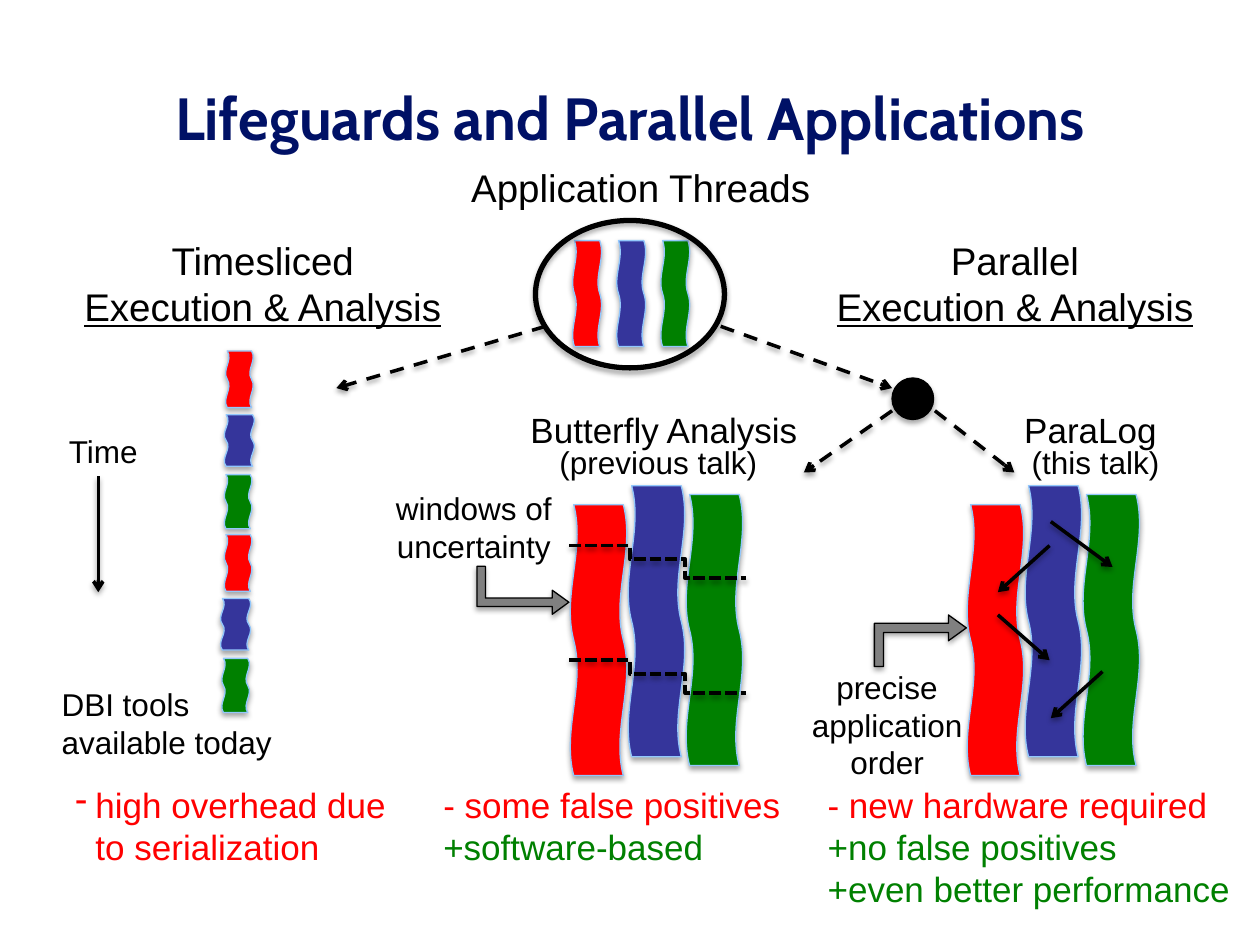
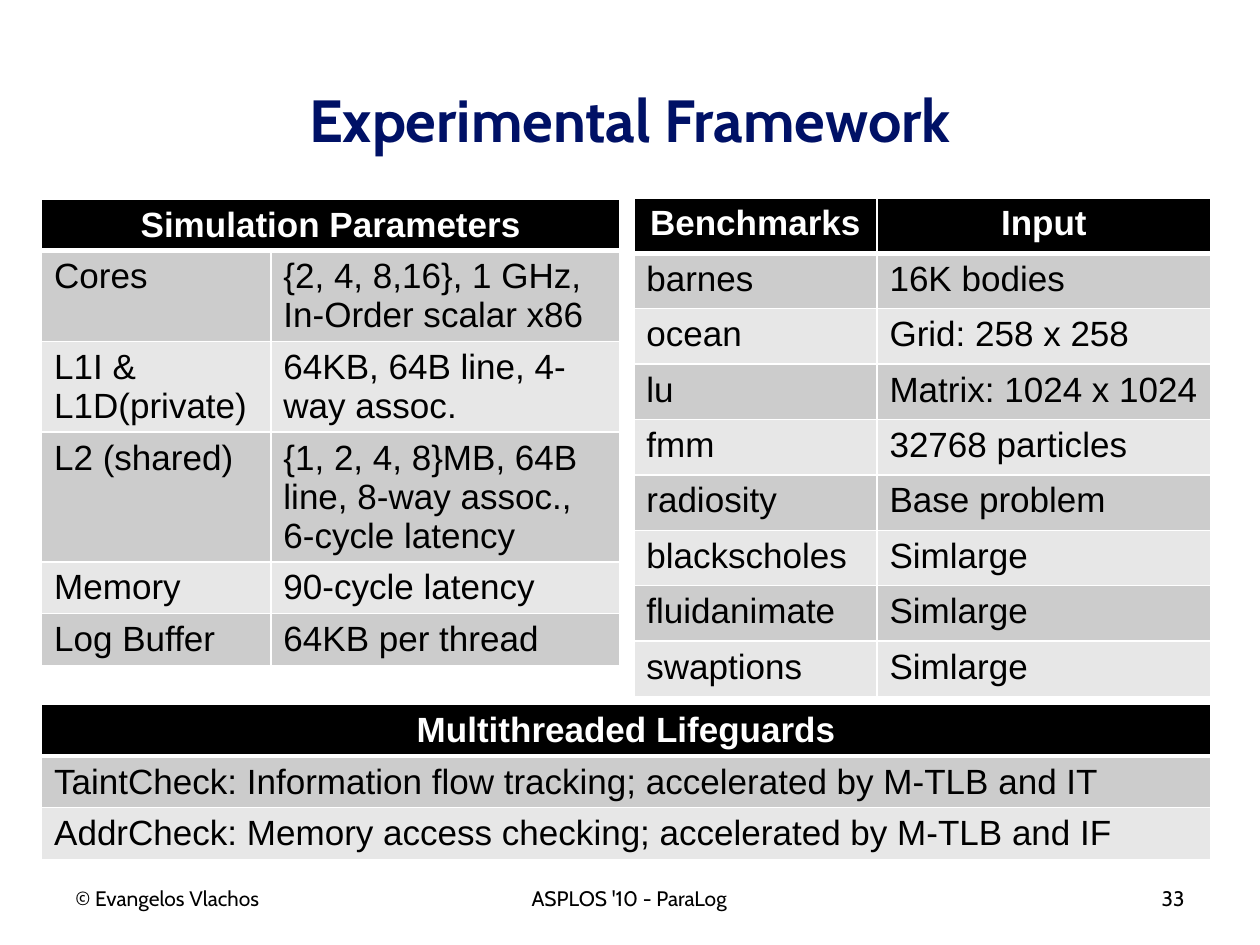
from itertools import cycle

from lxml.etree import SubElement
from pptx import Presentation
from pptx.dml.color import RGBColor
from pptx.enum.dml import MSO_LINE
from pptx.enum.shapes import MSO_CONNECTOR, MSO_SHAPE as SHAPE
from pptx.enum.text import MSO_ANCHOR, PP_ALIGN as ALIGN
from pptx.oxml.ns import qn
from pptx.util import Inches, Pt

BLACK, WHITE, NAVY, GRAY = "000000", "FFFFFF", "001166", "808080"
RED, BLUE, GREEN, WAVE_EDGE = "FF0000", "35359B", "008000", "93C8FC"
THREAD_COLORS = [RED, BLUE, GREEN]
BANDS = ["CCCCCC", "E7E7E7"]


def write(paragraph, text, size, color=BLACK, align=ALIGN.LEFT, **font_values):
    """Fill one paragraph with a single formatted run."""
    paragraph.alignment = align
    run = paragraph.add_run()
    run.text = text
    for name, value in {"name": "Arial", "size": Pt(size), **font_values}.items():
        setattr(run.font, name, value)
    run.font.color.rgb = RGBColor.from_string(color)


def draw(shape, fill=None, line=BLACK, width=0.75, dash=None, arrow=False):
    """Set fill, outline, arrowhead and the soft shadow under a shape."""
    if fill:
        shape.fill.solid()
        shape.fill.fore_color.rgb = RGBColor.from_string(fill)
    elif hasattr(shape, "fill"):
        shape.fill.background()
    shape.line.color.rgb = RGBColor.from_string(line)
    shape.line.width = Pt(width)
    if dash:
        shape.line.dash_style = dash
    properties = shape.element.spPr
    if arrow:
        SubElement(properties.find(qn("a:ln")), qn("a:tailEnd"), type="arrow")
    effects = SubElement(properties, qn("a:effectLst"))
    shadow = SubElement(effects, qn("a:outerShdw"), blurRad=str(Pt(3.1)),
                        dist=str(Pt(1.8)), dir="5400000", rotWithShape="0")
    shadow_color = SubElement(shadow, qn("a:srgbClr"), val=BLACK)
    SubElement(shadow_color, qn("a:alpha"), val="35000")


presentation = Presentation()
presentation.slide_width, presentation.slide_height = Inches(10), Inches(7.5)

slides = []
for title_text, top in [("Lifeguards and Parallel Applications", 0.3),
                        ("Experimental Framework", 0.32)]:
    slide = presentation.slides.add_slide(presentation.slide_layouts[5])
    title = slide.shapes.title
    title.left, title.top = Inches(0.5), Inches(top)
    title.width, title.height = Inches(9), Inches(1.25)
    title.text_frame.vertical_anchor = MSO_ANCHOR.MIDDLE
    write(title.text_frame.paragraphs[0], title_text, 34, NAVY, ALIGN.CENTER,
          name="Cabin", bold=True)
    slides.append(slide)
threads_slide, framework_slide = slides

# Slide 1: wavy threads, as centre x, centre y, length, thickness
shapes = threads_slide.shapes
waves = [(4.66 + 0.35 * i, 2.33, 0.84, 0.23) for i in range(3)]
for group_left in (4.75, 7.9):
    waves += [(group_left + 0.46 * i, y, 2.15, 0.45)
              for i, y in enumerate((5.08, 4.93, 5.0))]
slice_sizes = [(0.45, 0.22), (0.41, 0.24), (0.43, 0.22)] * 2
waves += [(1.9 - 0.01 * (i // 2 + i // 4), 3.01 + 0.486 * i, length, thickness)
          for i, (length, thickness) in enumerate(slice_sizes)]
for (x, y, length, thickness), color in zip(waves, cycle(THREAD_COLORS)):
    wave = shapes.add_shape(SHAPE.DOUBLE_WAVE, Inches(x - length / 2),
                            Inches(y - thickness / 2), Inches(length), Inches(thickness))
    wave.rotation = 270
    draw(wave, color, WAVE_EDGE)

thread_ring = shapes.add_shape(SHAPE.OVAL, Inches(4.25), Inches(1.75), Inches(1.5), Inches(1.17))
draw(thread_ring, width=3)

# Arrows: branches are dashed, time and ordering arrows are solid
branches = [(4.33, 2.59, 2.67, 3.08), (5.72, 2.59, 7.08, 3.08),
            (7.08, 3.26, 6.38, 3.75), (7.42, 3.26, 8.05, 3.75)]
time_and_order = [(0.78, 3.78, 0.78, 4.7),
                  (8.33, 4.33, 7.92, 4.7), (7.92, 4.88, 8.33, 5.24),
                  (8.34, 4.14, 8.83, 4.5), (8.75, 5.33, 8.34, 5.7)]
for arrows, dash in [(branches, MSO_LINE.DASH), (time_and_order, None)]:
    for ends in arrows:
        arrow = shapes.add_connector(MSO_CONNECTOR.STRAIGHT, *map(Inches, ends))
        draw(arrow, width=2, dash=dash, arrow=True)

branch_dot = shapes.add_shape(SHAPE.OVAL, Inches(7.08), Inches(3), Inches(0.33), Inches(0.33))
draw(branch_dot, BLACK)

# Window borders step down across the three butterfly threads
for top in (4.33, 5.24):
    steps = [(5, 0), (5, 0.11), (5.44, 0.11), (5.44, 0.26), (5.92, 0.26)]
    builder = shapes.build_freeform(Inches(4.52), Inches(top))
    builder.add_line_segments([(Inches(x), Inches(top + drop)) for x, drop in steps],
                              close=False)
    draw(builder.convert_to_shape(), width=2.25, dash=MSO_LINE.SQUARE_DOT)

for left, top, width, flipped in [(3.96, 4.32, 0.38, False), (7.1, 4.72, 0.41, True)]:
    pointer = shapes.add_shape(SHAPE.BENT_UP_ARROW, Inches(left), Inches(top),
                               Inches(width), Inches(0.73))
    for i, value in enumerate((0.177, 0.25, 0.347)):
        pointer.adjustments[i] = value
    pointer.rotation = 90
    if flipped:
        pointer.element.spPr.xfrm.set("flipH", "1")
    draw(pointer, GRAY)

# Text: left, top, width, height, size, alignment, lines as (text, colour, underline)
center, left_side = ALIGN.CENTER, ALIGN.LEFT
analysis = ("Execution & Analysis", BLACK, True)
labels = [
    (3.5, 1.25, 3.17, 0.47, 22, center, [("Application Threads",)]),
    (0.5, 1.83, 3.17, 0.84, 22, center, [("Timesliced",), analysis]),
    (6.47, 1.83, 3.17, 0.84, 22, center, [("Parallel",), analysis]),
    (0.28, 3.38, 1.08, 0.4, 18, center, [("Time",)]),
    (4.08, 3.19, 2.38, 0.44, 20, center, [("Butterfly Analysis",)]),
    (7.53, 3.19, 2.25, 0.44, 20, center, [("ParaLog",)]),
    (2.97, 3.83, 1.58, 0.71, 18, center, [("windows of",), ("uncertainty",)]),
    (6.25, 5.25, 1.58, 1.01, 18, center, [("precise application order",)]),
    (4.2, 3.47, 2.05, 0.4, 18, center, [("(previous talk)",)]),
    (7.67, 3.47, 2.05, 0.4, 18, center, [("(this talk)",)]),
    (0.39, 5.39, 2.05, 0.71, 18, left_side, [("DBI tools available today",)]),
    (0.5, 6.17, 2.7, 0.77, 20, left_side,
     [("high overhead due", RED), ("to serialization", RED)]),
    (3.42, 6.17, 3.33, 0.77, 20, left_side,
     [("- some false positives", RED), ("+software-based", GREEN)]),
    (6.47, 6.17, 3.54, 1.11, 20, left_side,
     [("- new hardware required", RED), ("+no false positives", GREEN),
      ("+even better performance", GREEN)]),
]
for left, top, width, height, size, align, lines in labels:
    box = shapes.add_textbox(Inches(left), Inches(top), Inches(width), Inches(height))
    frame = box.text_frame
    frame.word_wrap = True
    for i, (text, color, underline) in enumerate(
            (line + (BLACK, False)[len(line) - 1:]) for line in lines):
        paragraph = frame.paragraphs[0] if i == 0 else frame.add_paragraph()
        if lines[0][0] == "high overhead due":
            properties = paragraph._p.get_or_add_pPr()
            properties.set("marL", str(Inches(0.16)))
            if i == 0:
                properties.set("indent", str(-Inches(0.16)))
                SubElement(properties, qn("a:buChar"), char="-")
        write(paragraph, text, size, color, align, underline=underline)

# Slide 2: tables as left, top, column widths, row heights, rows
line_height, cell_padding = 0.31, 0.1
one, two, three = (cell_padding + line_height * n for n in (1, 2, 3))
tables = [
    (5.03, 1.57, [1.93, 2.65], [0.44] * 9, [
        ("Benchmarks", "Input"),
        ("barnes", "16K bodies"),
        ("ocean", "Grid: 258 x 258"),
        ("lu", "Matrix: 1024 x 1024"),
        ("fmm", "32768 particles"),
        ("radiosity", "Base problem"),
        ("blackscholes", "Simlarge"),
        ("fluidanimate", "Simlarge"),
        ("swaptions", "Simlarge")]),
    (0.33, 1.58, [1.82, 2.77], [one, two, two, three, one, one], [
        ("Simulation Parameters",),
        ("Cores", "{2, 4, 8,16}, 1 GHz, In-Order scalar x86"),
        ("L1I & L1D(private)", "64KB, 64B line, 4-way assoc."),
        ("L2 (shared)", "{1, 2, 4, 8}MB, 64B line, 8-way assoc., 6-cycle latency"),
        ("Memory", "90-cycle latency"),
        ("Log Buffer", "64KB per thread")]),
    (0.33, 5.59, [9.28], [one] * 3, [
        ("Multithreaded Lifeguards",),
        ("TaintCheck: Information flow tracking; accelerated by M-TLB and IT",),
        ("AddrCheck: Memory access checking; accelerated by M-TLB and IF",)]),
]
for left, top, widths, heights, rows in tables:
    table = framework_slide.shapes.add_table(
        len(rows), len(widths), Inches(left), Inches(top),
        Inches(sum(widths)), Inches(sum(heights))).table
    for column, width in zip(table.columns, widths):
        column.width = Inches(width)
    for r, (height, texts) in enumerate(zip(heights, rows)):
        table.rows[r].height = Inches(height)
        if len(texts) < len(widths):
            table.cell(r, 0).merge(table.cell(r, len(widths) - 1))
        header = r == 0
        for c in range(len(widths)):
            cell = table.cell(r, c)
            cell.fill.solid()
            cell.fill.fore_color.rgb = RGBColor.from_string(BLACK if header else BANDS[(r - 1) % 2])
            if c < len(texts):
                write(cell.text_frame.paragraphs[0], texts[c], 20,
                      WHITE if header else BLACK,
                      ALIGN.CENTER if header else ALIGN.LEFT, bold=header)
            cell_properties = cell._tc.get_or_add_tcPr()
            thick_sides = {0: "lnB", 1: "lnT"}
            for position, side in enumerate(("lnL", "lnR", "lnT", "lnB")):
                weight = 3 if thick_sides.get(r) == side else 1
                border = SubElement(cell_properties, qn("a:" + side), w=str(Pt(weight)))
                border_fill = SubElement(border, qn("a:solidFill"))
                SubElement(border_fill, qn("a:srgbClr"), val=WHITE)
                cell_properties.insert(position, border)

footers = [(0.5, 2.33, "© Evangelos Vlachos", ALIGN.LEFT),
           (1.58, 6.83, "ASPLOS '10 - ParaLog", ALIGN.CENTER),
           (7.17, 2.33, "33", ALIGN.RIGHT)]
for left, width, text, align in footers:
    footer = framework_slide.shapes.add_textbox(
        Inches(left), Inches(6.98), Inches(width), Inches(0.52))
    footer.text_frame.word_wrap = True
    write(footer.text_frame.paragraphs[0], text, 12, align=align, name="Cabin")

presentation.save("out.pptx")
